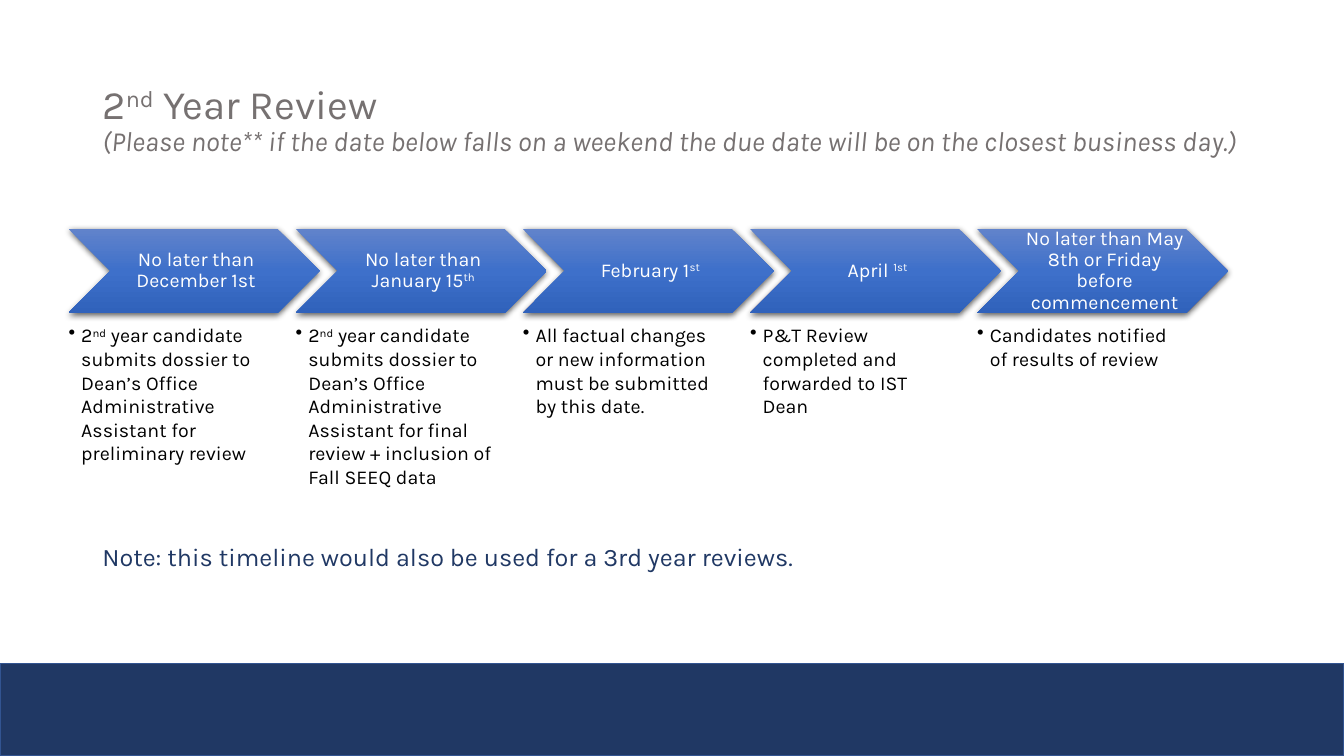
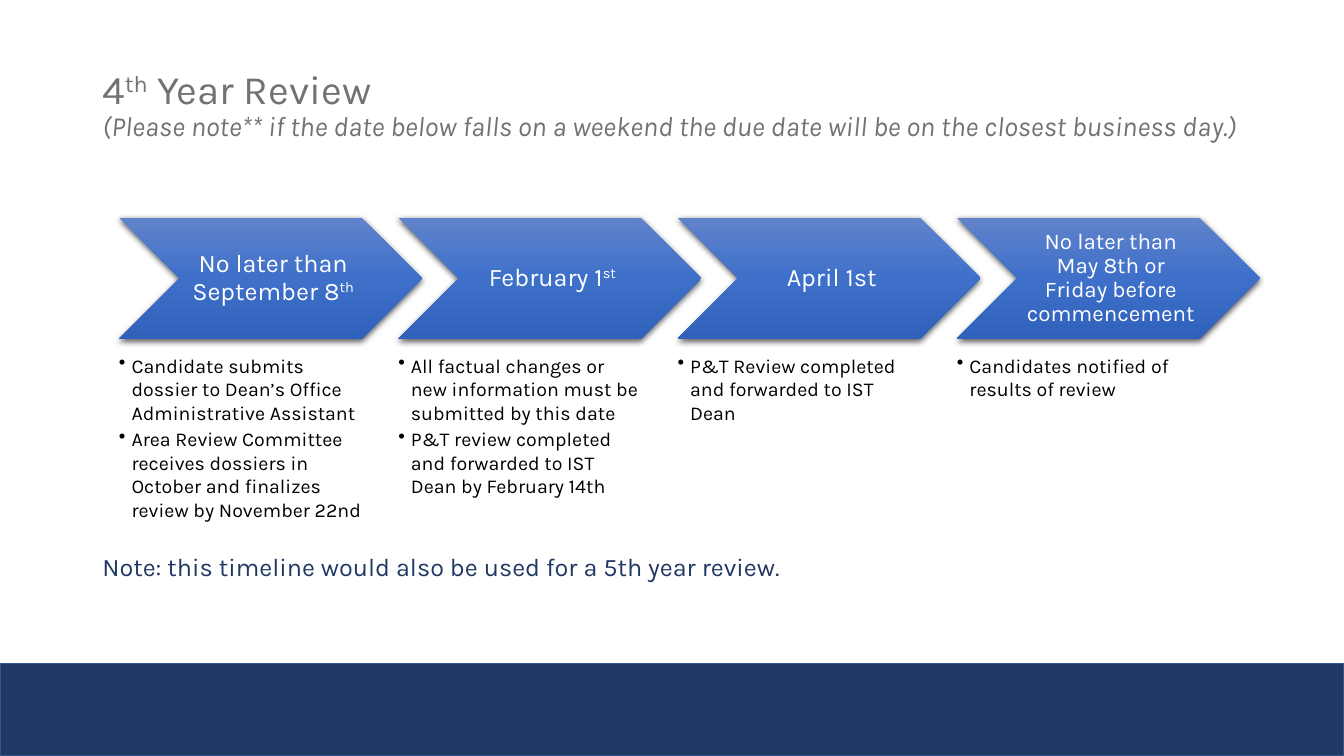
import copy
import pptx
import pptx.util
import pptx.dml.color
import pptx.enum.shapes
import pptx.enum.text
import pptx.oxml.ns
from lxml import etree

Pt = pptx.util.Pt
qn = pptx.oxml.ns.qn
SHAPE = pptx.enum.shapes.MSO_SHAPE
ALIGN = pptx.enum.text.PP_ALIGN
ANCHOR = pptx.enum.text.MSO_ANCHOR

FONT = "Karla"
NAVY = "203864"
EDGE = "325491"
GREY = "767171"
BLACK = "000000"
WHITE = "FFFFFF"
BLUES = ["6183CB", "3E70CA", "3062BB"]
WIDE, HIGH = 960, 540
OVERLAP = 17
CAUTION = ("(Please note** if the date below falls on a weekend "
           "the due date will be on the closest business day.)")


def tint(code):
    return pptx.dml.color.RGBColor.from_string(code)


def place(shape, box):
    shape.left, shape.top, shape.width, shape.height = map(Pt, box)


def write(para, text, size, hue, slant=False):
    for turn, part in enumerate(text.split("^")):
        if not part:
            continue
        run = para.add_run()
        run.text = part
        font = run.font
        font.name = FONT
        font.size = Pt(size)
        font.italic = slant
        font.color.rgb = tint(hue)
        if turn % 2:
            run._r.get_or_add_rPr().set("baseline", "30000")


def inset(frame, left, rest):
    frame.word_wrap = True
    frame.margin_left = Pt(left)
    frame.margin_top = frame.margin_right = frame.margin_bottom = Pt(rest)


def add_band(slide, master, box):
    band = slide.shapes.add_shape(SHAPE.RECTANGLE, *map(Pt, box))
    band.shadow.inherit = False
    band.fill.solid()
    band.fill.fore_color.rgb = tint(NAVY)
    band.line.color.rgb = tint(EDGE)
    band.line.width = Pt(1)
    master.shapes.element.insert(2, band.element)


def add_title(slide, text, box):
    title = slide.shapes.title
    place(title, box)
    frame = title.text_frame
    frame.word_wrap = True
    frame.auto_size = pptx.enum.text.MSO_AUTO_SIZE.NONE
    frame.vertical_anchor = ANCHOR.MIDDLE
    para = frame.paragraphs[0]
    para.alignment = ALIGN.LEFT
    para.line_spacing = 0.9
    write(para, text, 28.8, GREY)
    para.add_line_break()
    etree.SubElement(para._p.find(qn("a:br")), qn("a:rPr"), sz="2880")
    write(para, CAUTION, 19.8, GREY, True)


def shade(shape):
    shape.line.fill.background()
    shape.fill.gradient()
    shape.fill.gradient_angle = 270
    stops = shape.element.spPr.find(".//" + qn("a:gsLst"))
    stops.append(copy.deepcopy(stops[0]))
    for rank, stop in enumerate(shape.fill.gradient_stops):
        stop.position = rank / 2
        stop.color.rgb = tint(BLUES[rank])
    shape.shadow.inherit = False
    effects = shape.element.spPr.find(qn("a:effectLst"))
    cast = etree.SubElement(effects, qn("a:outerShdw"), blurRad=str(Pt(4.5)),
                            dist=str(Pt(1.5)), dir="5400000", rotWithShape="0")
    color = etree.SubElement(cast, qn("a:srgbClr"), val=BLACK)
    etree.SubElement(color, qn("a:alpha"), val="63000")


def add_arrow(slide, text, size, box):
    arrow = slide.shapes.add_shape(SHAPE.CHEVRON, *map(Pt, box))
    shade(arrow)
    frame = arrow.text_frame
    inset(frame, size * 0.31, size * 0.1)
    frame.vertical_anchor = ANCHOR.MIDDLE
    para = frame.paragraphs[0]
    para.alignment = ALIGN.CENTER
    para.line_spacing = 0.9
    write(para, text, size, WHITE)


def add_list(slide, items, box):
    frame = slide.shapes.add_textbox(*map(Pt, box)).text_frame
    inset(frame, 0, 0)
    for rank, item in enumerate(items):
        para = frame.add_paragraph() if rank else frame.paragraphs[0]
        props = para._p.get_or_add_pPr()
        props.set("marL", str(Pt(9)))
        props.set("indent", str(-Pt(9)))
        etree.SubElement(props, qn("a:buChar"), char="•")
        para.space_after = Pt(2.1)
        write(para, item, 14, BLACK)


def add_chain(slide, steps, box, drop, depth):
    left, top, width, height = box
    for rank, (label, size, items) in enumerate(steps):
        start = left + rank * (width - OVERLAP)
        add_arrow(slide, label, size, (start, top, width, height))
        add_list(slide, items, (start, top + height + drop, width * 0.8, depth))


def add_note(slide, text, box):
    frame = slide.shapes.add_textbox(*map(Pt, box)).text_frame
    frame.word_wrap = True
    write(frame.paragraphs[0], text, 18, NAVY)


SECOND = [
    ("No later than December 1st", 14,
     ["2^nd^ year candidate submits dossier to Dean’s Office "
      "Administrative Assistant for preliminary review"]),
    ("No later than January 15^th", 14,
     ["2^nd^ year candidate submits dossier to Dean’s Office Administrative "
      "Assistant for final review + inclusion of Fall SEEQ data"]),
    ("February 1^st", 14,
     ["All factual changes or new information must be submitted by this date."]),
    ("April ^1st", 14,
     ["P&T Review completed and forwarded to IST Dean"]),
    ("No later than May 8th or Friday before commencement", 14,
     ["Candidates notified of results of review"]),
]
FOURTH = [
    ("No later than September 8^th", 18,
     ["Candidate submits dossier to Dean’s Office Administrative Assistant",
      "Area Review Committee receives dossiers in October and finalizes "
      "review by November 22nd"]),
    ("February 1^st", 18,
     ["All factual changes or new information must be submitted by this date",
      "P&T review completed and forwarded to IST Dean by February 14th"]),
    ("April 1st", 18,
     ["P&T Review completed and forwarded to IST Dean"]),
    ("No later than May 8th or Friday before commencement", 16,
     ["Candidates notified of results of review"]),
]


def main():
    deck = pptx.Presentation()
    deck.slide_width, deck.slide_height = Pt(WIDE), Pt(HIGH)
    layout = deck.slide_layouts.get_by_name("Title Only")

    slide = deck.slides.add_slide(layout)
    add_band(slide, deck.slide_master, (0, 474, WIDE, 66))
    add_title(slide, "2^nd^ Year Review", (66, 62, 828, 49))
    add_chain(slide, SECOND, (49, 163.5, 179.25, 60), 7.5, 112)
    add_note(slide, "Note: this timeline would also be used for a 3rd year reviews.",
             (66, 383, 567, 29))

    slide = deck.slides.add_slide(layout)
    add_title(slide, "4^th^ Year Review", (66, 51.3, 828, 49))
    add_chain(slide, FOURTH, (85, 155.5, 216.5, 86.5), 10.5, 115)
    add_note(slide, "Note: this timeline would also be used for a 5th year review.",
             (66, 390, 815, 29))

    deck.save("out.pptx")


if __name__ == "__main__":
    main()
